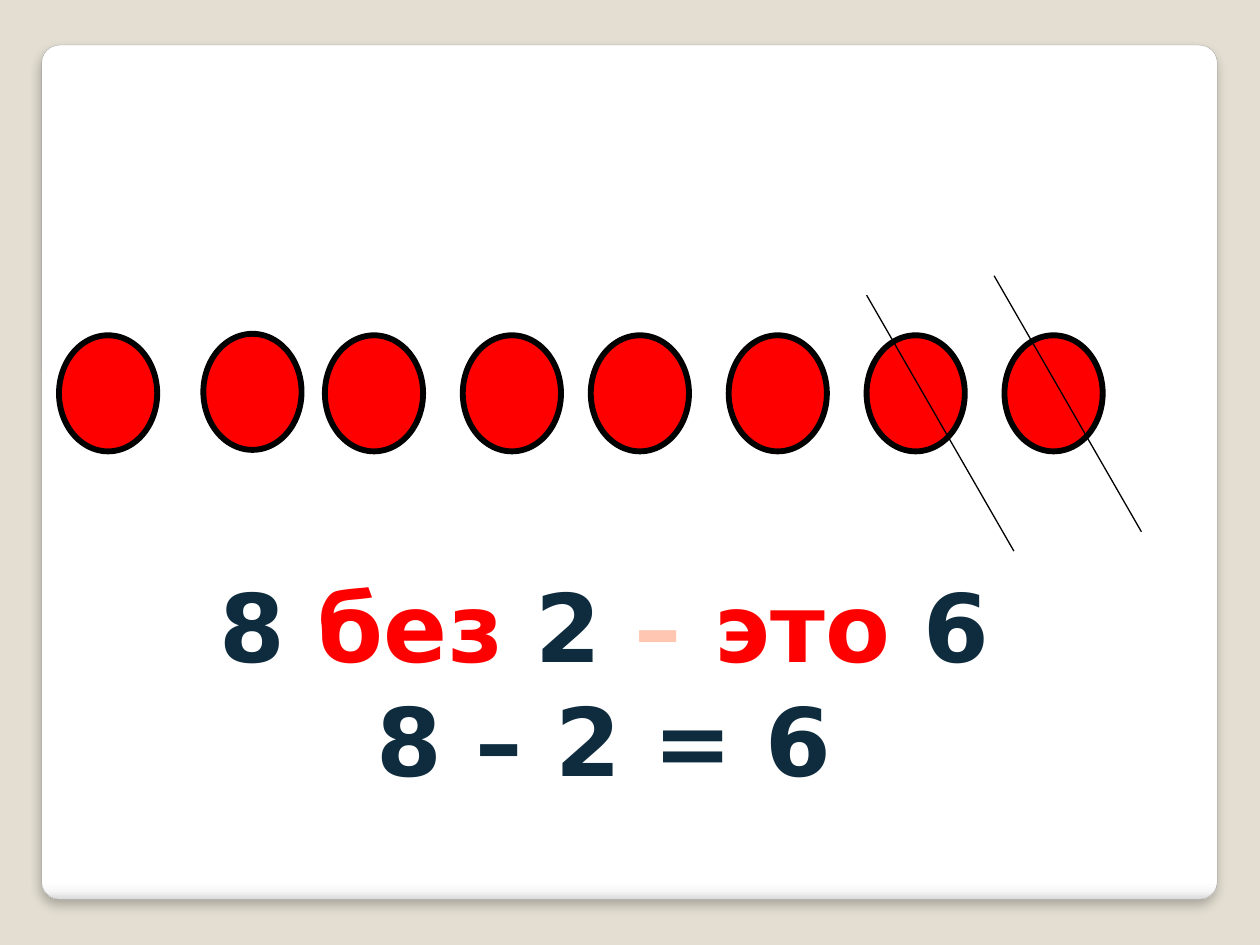
"""Build a subtraction slide: eight circles, two crossed out, and the sum."""
import dataclasses

import lxml.etree
import pptx
import pptx.dml.color
import pptx.enum.shapes
import pptx.enum.text
import pptx.oxml.ns
import pptx.util
from pptx.util import Cm


@dataclasses.dataclass(frozen=True)
class Theme:
    background: str = "E3DED1"
    panel_stops: tuple = ((0, "FFFFFF"), (98, "FFFFFF"), (99, "F7F7F7"), (100, "DADADA"))
    panel_line: str = "A4A4A4"
    black: str = "000000"
    red: str = "FF0000"
    navy: str = "0E2C3E"
    peach: str = "FFC6B2"
    font: str = "DejaVu Sans"
    text_size: float = 54


THEME = Theme()


def color(value):
    return pptx.dml.color.RGBColor.from_string(value)


def add_child(parent, tag, **attributes):
    child = lxml.etree.SubElement(parent, pptx.oxml.ns.qn(tag))
    for name, value in attributes.items():
        child.set(name, str(value))
    return child


def set_line(line, value, width):
    line.color.rgb = color(value)
    line.width = pptx.util.Pt(width)


def add_panel(slide):
    shape = slide.shapes.add_shape(
        pptx.enum.shapes.MSO_SHAPE.ROUNDED_RECTANGLE, Cm(0.84), Cm(0.91), Cm(23.7), Cm(17.22))
    shape.adjustments[0] = 0.021
    set_line(shape.line, THEME.panel_line, 0.16)
    shape.fill.gradient()
    shape.fill.gradient_angle = 270
    properties = shape._element.spPr
    stops = properties.find(".//" + pptx.oxml.ns.qn("a:gsLst"))
    for stop in list(stops):
        stops.remove(stop)
    for position, value in THEME.panel_stops:
        stop = add_child(stops, "a:gs", pos=position * 1000)
        add_child(stop, "a:srgbClr", val=value)
    shape.shadow.inherit = False
    effects = properties.find(pptx.oxml.ns.qn("a:effectLst"))
    shadow = add_child(effects, "a:outerShdw", blurRad=pptx.util.Pt(6), dist=pptx.util.Pt(4),
                       dir=90 * 60000, algn="t", rotWithShape=0)
    shadow_color = add_child(shadow, "a:srgbClr", val=THEME.black)
    add_child(shadow_color, "a:alpha", val=25000)


def add_circle(slide, left, top):
    shape = slide.shapes.add_shape(
        pptx.enum.shapes.MSO_SHAPE.OVAL, Cm(left), Cm(top), Cm(1.98), Cm(2.34))
    shape.shadow.inherit = False
    shape.fill.solid()
    shape.fill.fore_color.rgb = color(THEME.red)
    set_line(shape.line, THEME.black, 3.35)


def add_strike(slide, left, top):
    connector = slide.shapes.add_connector(
        pptx.enum.shapes.MSO_CONNECTOR.STRAIGHT,
        Cm(left), Cm(top), Cm(left + 2.97), Cm(top + 5.16))
    set_line(connector.line, THEME.black, 0.75)
    add_child(connector._element.spPr, "a:effectLst")


def add_text(slide, lines):
    frame = slide.shapes.add_textbox(Cm(3.91), Cm(11.33), Cm(16.54), Cm(4.88)).text_frame
    frame.word_wrap = False
    frame.auto_size = pptx.enum.text.MSO_AUTO_SIZE.SHAPE_TO_FIT_TEXT
    for index, runs in enumerate(lines):
        paragraph = frame.add_paragraph() if index else frame.paragraphs[0]
        paragraph.alignment = pptx.enum.text.PP_ALIGN.CENTER
        for text, value in runs:
            run = paragraph.add_run()
            run.text = text
            run.font.name = THEME.font
            run.font.size = pptx.util.Pt(THEME.text_size)
            run.font.bold = True
            run.font.color.rgb = color(value)


def main():
    presentation = pptx.Presentation()
    presentation.slide_width = Cm(25.4)
    presentation.slide_height = Cm(19.05)
    slide = presentation.slides.add_slide(presentation.slide_layouts[6])
    slide.background.fill.solid()
    slide.background.fill.fore_color.rgb = color(THEME.background)

    add_panel(slide)
    for left, top in ((1.19, 6.76), (4.1, 6.73), (6.55, 6.76), (9.33, 6.76),
                      (11.91, 6.76), (14.69, 6.76), (17.47, 6.76), (20.25, 6.76)):
        add_circle(slide, left, top)
    for left, top in ((20.04, 5.56), (17.47, 5.95)):
        add_strike(slide, left, top)
    add_text(slide, [
        [("8 ", THEME.navy), ("без ", THEME.red), ("2", THEME.navy),
         (" – ", THEME.peach), ("это ", THEME.red), ("6", THEME.navy)],
        [("8 – 2 = 6", THEME.navy)],
    ])
    presentation.save("out.pptx")


if __name__ == "__main__":
    main()
